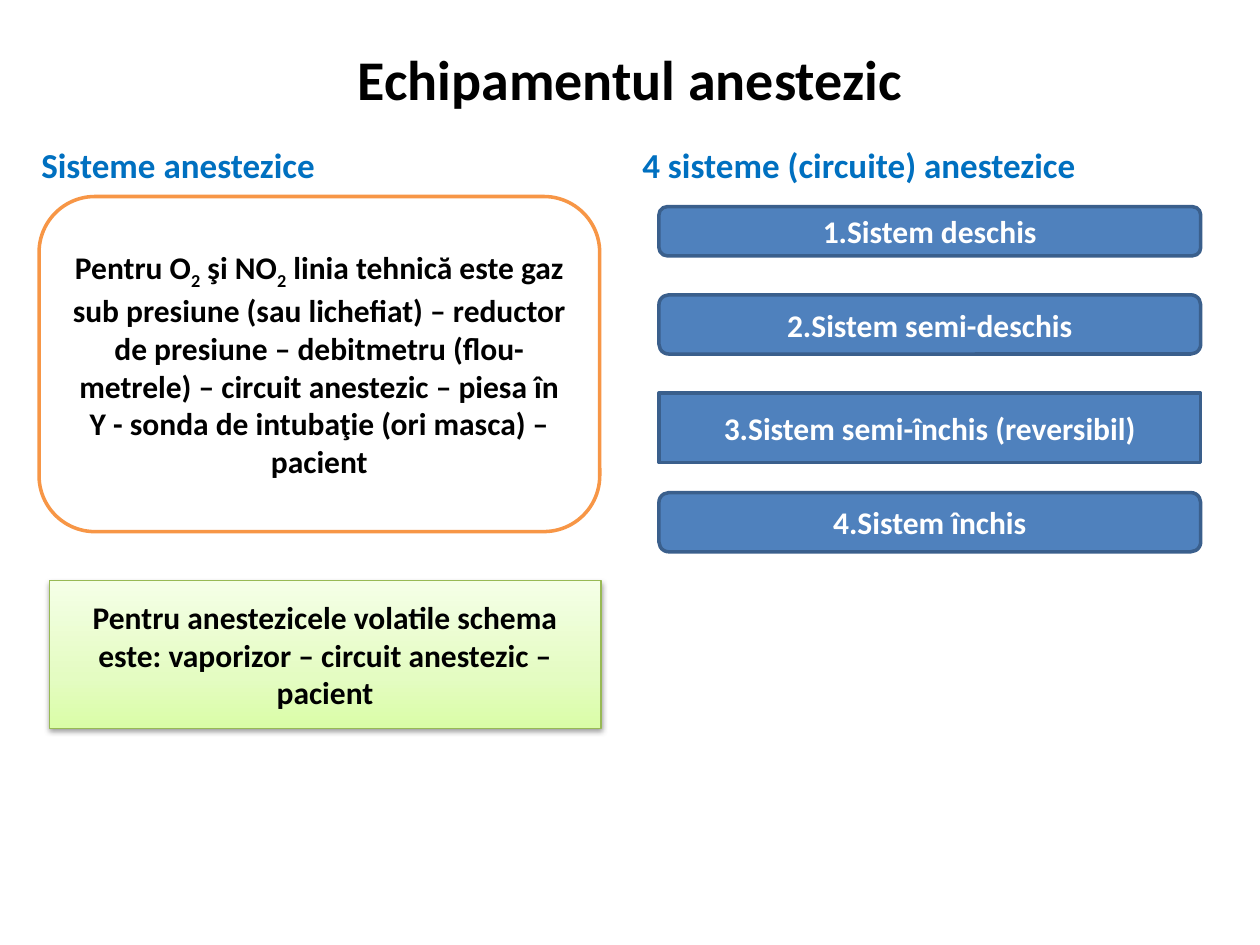
"""Build a slide on anesthetic equipment and the four anesthetic systems."""
from copy import deepcopy
from dataclasses import dataclass

from lxml import etree
from pptx import Presentation
from pptx.dml.color import RGBColor
from pptx.enum.shapes import MSO_SHAPE
from pptx.enum.text import MSO_ANCHOR, PP_ALIGN
from pptx.oxml.ns import qn
from pptx.util import Inches, Pt

RECT = MSO_SHAPE.RECTANGLE
ROUNDED = MSO_SHAPE.ROUNDED_RECTANGLE
CENTER = PP_ALIGN.CENTER
LEFT = PP_ALIGN.LEFT
MIDDLE = MSO_ANCHOR.MIDDLE

BLACK = RGBColor(0x00, 0x00, 0x00)
WHITE = RGBColor(0xFF, 0xFF, 0xFF)
HEADING_BLUE = RGBColor(0x00, 0x70, 0xC0)
ORANGE = RGBColor(0xF7, 0x96, 0x46)
SYSTEM_BLUE = RGBColor(0x4F, 0x81, 0xBD)
SYSTEM_EDGE = RGBColor(0x3A, 0x5F, 0x8C)
GREEN_EDGE = RGBColor(0x98, 0xB9, 0x55)
GREEN_STOPS = (
    (0, RGBColor(0xDA, 0xFD, 0xA7)),
    (0.35, RGBColor(0xE4, 0xFC, 0xC2)),
    (1, RGBColor(0xF5, 0xFF, 0xE7)),
)
FONT = "Calibri"
SUBSCRIPT = "-25000"


@dataclass(frozen=True)
class Heading:
    text: str
    left: float
    width: float


@dataclass(frozen=True)
class Box:
    runs: tuple[str, ...]
    left: float
    top: float
    width: float
    height: float
    preset: int = ROUNDED
    fill: RGBColor = SYSTEM_BLUE
    edge: RGBColor = SYSTEM_EDGE
    ink: RGBColor = WHITE
    edge_width: float = 2


HEADINGS = (
    Heading("Sisteme anestezice", 0.23, 4.68),
    Heading("4 sisteme (circuite) anestezice", 5, 4.5),
)
GAS_LINE = Box(
    ("Pentru O", "2", " şi NO", "2",
     " linia tehnică este gaz sub presiune (sau lichefiat) – reductor de presiune"
     " – debitmetru (flou-metrele) – circuit anestezic – piesa în Y"
     " - sonda de intubaţie (ori masca) – pacient"),
    0.31, 1.56, 4.45, 2.66, fill=WHITE, edge=ORANGE, ink=BLACK,
)
VOLATILE_LINE = Box(
    ("Pentru anestezicele volatile schema este: vaporizor – circuit anestezic – pacient",),
    0.39, 4.61, 4.38, 1.17, RECT, GREEN_STOPS[0][1], GREEN_EDGE, BLACK, 0.75,
)
SYSTEMS = tuple(
    Box((text,), 5.23, top, 4.3, height, preset)
    for text, top, height, preset in (
        ("1.Sistem deschis", 1.64, 0.39, ROUNDED),
        ("2.Sistem semi-deschis", 2.34, 0.47, ROUNDED),
        ("3.Sistem semi-închis (reversibil)", 3.12, 0.55, RECT),
        ("4.Sistem închis", 3.91, 0.47, ROUNDED),
    )
)


def write(frame, runs: tuple[str, ...], size: float, color: RGBColor, align=CENTER) -> None:
    """Write bold runs into the first paragraph, lowering the bare digits."""
    frame.word_wrap = True
    paragraph = frame.paragraphs[0]
    paragraph.alignment = align
    for text in runs:
        run = paragraph.add_run()
        run.text = text
        run.font.name = FONT
        run.font.size = Pt(size)
        run.font.bold = True
        run.font.color.rgb = color
        if text.isdigit():
            run.font._element.set("baseline", SUBSCRIPT)


def add_heading(slide, heading: Heading) -> None:
    """Add one column heading."""
    column = slide.shapes.add_textbox(
        Inches(heading.left), Inches(1.09), Inches(heading.width), Inches(5.61))
    write(column.text_frame, (heading.text,), 20, HEADING_BLUE, LEFT)


def add_box(slide, box: Box):
    """Add one outlined box with centred text."""
    shape = slide.shapes.add_shape(
        box.preset, Inches(box.left), Inches(box.top), Inches(box.width), Inches(box.height))
    shape.shadow.inherit = False
    shape.fill.solid()
    shape.fill.fore_color.rgb = box.fill
    shape.line.color.rgb = box.edge
    shape.line.width = Pt(box.edge_width)
    shape.text_frame.vertical_anchor = MIDDLE
    write(shape.text_frame, box.runs, 18, box.ink)
    return shape


def apply_gradient(shape) -> None:
    """Shade a shape with the green stops, from bottom to top."""
    shape.fill.gradient()
    shape.fill.gradient_angle = 90
    stop_list = next(shape._element.spPr.iter(qn("a:gsLst")))
    stop_list.insert(1, deepcopy(stop_list[0]))
    for stop, (position, color) in zip(shape.fill.gradient_stops, GREEN_STOPS):
        stop.position = position
        stop.color.rgb = color


def apply_shadow(shape) -> None:
    """Give a shape a soft shadow below it."""
    effects = shape._element.spPr.find(qn("a:effectLst"))
    shadow = etree.SubElement(
        effects, qn("a:outerShdw"), blurRad=str(Pt(3.1)), dist=str(Pt(1.6)),
        dir="5400000", rotWithShape="0")
    color = etree.SubElement(shadow, qn("a:srgbClr"), val=str(BLACK))
    etree.SubElement(color, qn("a:alpha"), val="38000")


def main() -> None:
    """Build and save the slide."""
    presentation = Presentation()
    presentation.slide_width = Inches(10)
    presentation.slide_height = Inches(7.5)
    slide = presentation.slides.add_slide(presentation.slide_layouts[5])

    title = slide.shapes.title
    title.left, title.top = Inches(0.5), Inches(0.3)
    title.width, title.height = Inches(9), Inches(0.64)
    title.text_frame.vertical_anchor = MIDDLE
    write(title.text_frame, ("Echipamentul anestezic",), 32, BLACK)

    for heading in HEADINGS:
        add_heading(slide, heading)
    add_box(slide, GAS_LINE)
    volatile = add_box(slide, VOLATILE_LINE)
    apply_gradient(volatile)
    apply_shadow(volatile)
    for system in SYSTEMS:
        add_box(slide, system)

    presentation.save("out.pptx")


if __name__ == "__main__":
    main()
